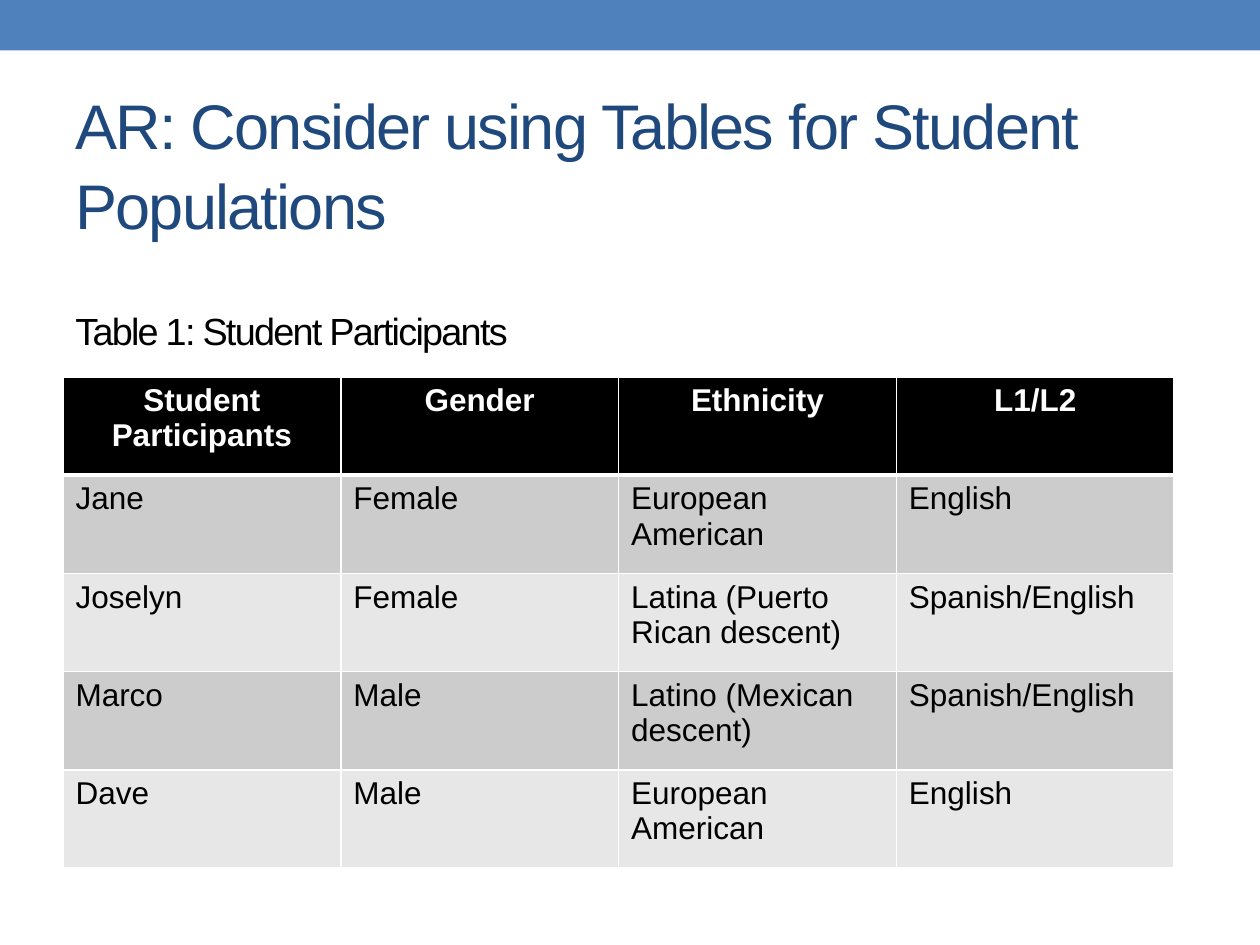
from lxml import etree
from pptx import Presentation
from pptx.dml.color import RGBColor
from pptx.enum.shapes import MSO_SHAPE
from pptx.enum.text import PP_ALIGN
from pptx.oxml.ns import qn
from pptx.util import Inches, Pt

RECT = MSO_SHAPE.RECTANGLE
LEFT, CENTER = PP_ALIGN.LEFT, PP_ALIGN.CENTER
FONT = "Arial"
ROWS = [
    ["Student Participants", "Gender", "Ethnicity", "L1/L2"],
    ["Jane", "Female", "European American", "English"],
    ["Joselyn", "Female", "Latina (Puerto Rican descent)", "Spanish/English"],
    ["Marco", "Male", "Latino (Mexican descent)", "Spanish/English"],
    ["Dave", "Male", "European American", "English"],
]


def color(code):
    """Return the colour for a hex string."""
    return RGBColor.from_string(code)


def paint(item, code):
    """Give a shape or cell a solid fill."""
    item.fill.solid()
    item.fill.fore_color.rgb = color(code)


def style(para, size, code, bold=False):
    """Format every run of a paragraph."""
    for run in para.runs:
        run.font.name = FONT
        run.font.size = Pt(size)
        run.font.bold = bold
        run.font.color.rgb = color(code)


def add_band(slide):
    """Draw the blue band along the top edge."""
    band = slide.shapes.add_shape(RECT, 0, 0, Inches(10), Inches(0.4))
    band.shadow.inherit = False
    paint(band, "4F81BD")
    band.line.fill.background()


def add_text(slide, text, top, height, size, code, pitch=1.0):
    """Add a heading with tightened letter spacing."""
    box = slide.shapes.add_textbox(Inches(0.5), Inches(top), Inches(9), Inches(height))
    frame = box.text_frame
    frame.word_wrap = True
    frame.text = text
    para = frame.paragraphs[0]
    para.line_spacing = pitch
    style(para, size, code)
    for run in para.runs:
        run.font._element.set("spc", "-100")


def add_edges(cell, widths):
    """Draw white cell borders, with widths in points by side."""
    props = cell._tc.get_or_add_tcPr()
    for side, width in widths.items():
        line = etree.SubElement(props, qn(f"a:ln{side}"), w=str(Pt(width)))
        fill = etree.SubElement(line, qn("a:solidFill"))
        etree.SubElement(fill, qn("a:srgbClr"), val="FFFFFF")


def fill_cell(cell, text, row):
    """Write and format one cell according to its row."""
    head = row == 0
    add_edges(cell, {"L": 1, "R": 1, "T": 3 if row == 1 else 1, "B": 3 if head else 1})
    paint(cell, "000000" if head else "CCCCCC" if row % 2 else "E7E7E7")
    cell.text = text
    para = cell.text_frame.paragraphs[0]
    para.alignment = CENTER if head else LEFT
    style(para, 18, "FFFFFF" if head else "000000", head)


def add_grid(slide, rows):
    """Add the table of students."""
    frame = slide.shapes.add_table(
        len(rows), len(rows[0]), Inches(0.5), Inches(2.99), Inches(8.82), Inches(3.9)
    )
    for r, row in enumerate(rows):
        for c, text in enumerate(row):
            fill_cell(frame.table.cell(r, c), text, r)


def main():
    """Build and save the slide."""
    deck = Presentation()
    deck.slide_width, deck.slide_height = Inches(10), Inches(7.5)
    slide = deck.slides.add_slide(deck.slide_layouts[6])
    add_band(slide)
    title = "AR: Consider using Tables for Student Populations"
    add_text(slide, title, 0.61, 1.3, 36, "1F497D", 1.05)
    add_text(slide, "Table 1: Student Participants", 2.39, 0.45, 21.6, "000000")
    add_grid(slide, ROWS)
    deck.save("out.pptx")


if __name__ == "__main__":
    main()
